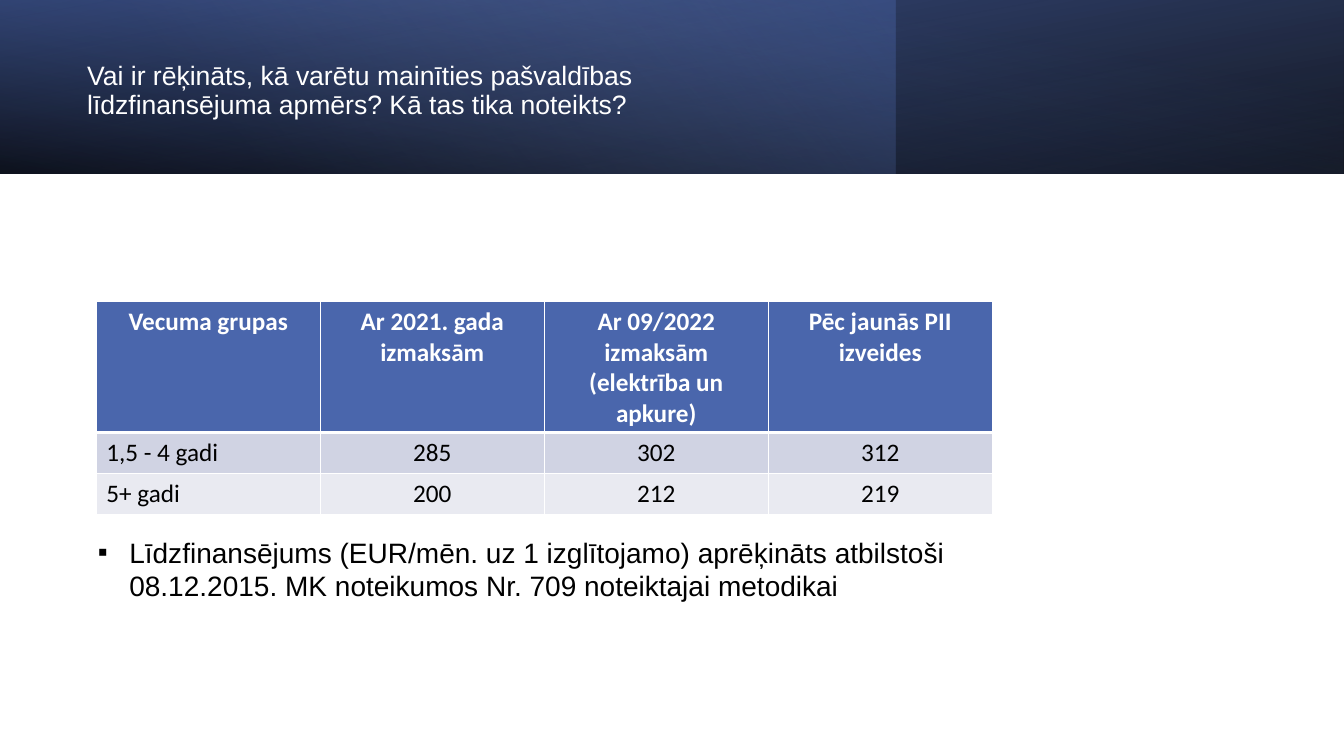
import pptx
import pptx.util
import pptx.dml.color
import pptx.enum.shapes
import pptx.enum.text
import pptx.oxml
import pptx.oxml.ns

Pt = pptx.util.Pt
RGBColor = pptx.dml.color.RGBColor
PP_ALIGN = pptx.enum.text.PP_ALIGN
ANCHOR = pptx.enum.text.MSO_ANCHOR
WHITE = RGBColor(0xFF, 0xFF, 0xFF)
BLACK = RGBColor(0x00, 0x00, 0x00)
BLUE = RGBColor(0x4A, 0x66, 0xAC)
NAVY = RGBColor(0x38, 0x4C, 0x81)
PALE_BLUE = RGBColor(0x90, 0xA2, 0xCF)
ROW_DARK = RGBColor(0xD0, 0xD3, 0xE3)
ROW_LIGHT = RGBColor(0xE9, 0xEA, 0xF1)
NS = pptx.oxml.ns.nsdecls("a")


def write(tf, text, size, color, font="Arial", bold=False, align=PP_ALIGN.LEFT, spacing=1.0):
    tf.word_wrap = True
    p = tf.paragraphs[0]
    p.text = text
    p.alignment = align
    p.line_spacing = spacing
    for r in p.runs:
        r.font.size = Pt(size)
        r.font.name = font
        r.font.bold = bold
        r.font.color.rgb = color
    return p


prs = pptx.Presentation()
prs.slide_width, prs.slide_height = Pt(960), Pt(540)
s = prs.slides.add_slide(prs.slide_layouts[6])

header_bands = [
    (960, 180, True, 100, [(0, BLACK, 96), (100, NAVY, 100)]),
    (640, 0, False, 140, [(0, BLUE, 41), (74, PALE_BLUE, 0)]),
    (960, 0, True, 260, [(0, BLACK, 63), (78, BLUE, 15)]),
]
for width, rotation, flipped, angle, stops in header_bands:
    sp = s.shapes.add_shape(pptx.enum.shapes.MSO_SHAPE.RECTANGLE, 0, 0, Pt(width), Pt(124))
    sp.shadow.inherit = False
    sp.line.fill.background()
    sp.rotation = rotation
    if flipped:
        sp.element.spPr.xfrm.set("flipH", "1")
    stop_xml = "".join(
        f'<a:gs pos="{pos * 1000}"><a:srgbClr val="{color}">'
        f'<a:alpha val="{opacity * 1000}"/></a:srgbClr></a:gs>'
        for pos, color, opacity in stops
    )
    gradient = pptx.oxml.parse_xml(
        f'<a:gradFill {NS} rotWithShape="1"><a:gsLst>{stop_xml}</a:gsLst>'
        f'<a:lin ang="{angle * 60000}" scaled="0"/></a:gradFill>'
    )
    sp.element.spPr.find(pptx.oxml.ns.qn("a:prstGeom")).addnext(gradient)

title = s.shapes.add_textbox(Pt(55.2), Pt(19.4), Pt(556), Pt(91.4))
title.text_frame.vertical_anchor = ANCHOR.MIDDLE
write(
    title.text_frame,
    "Vai ir rēķināts, kā varētu mainīties pašvaldības\n"
    "līdzfinansējuma apmērs? Kā tas tika noteikts?",
    size=19, color=WHITE, spacing=0.9,
)

note = s.shapes.add_textbox(Pt(62.8), Pt(378.7), Pt(713), Pt(55.7))
note.text_frame.auto_size = pptx.enum.text.MSO_AUTO_SIZE.SHAPE_TO_FIT_TEXT
p = write(
    note.text_frame,
    "Līdzfinansējums (EUR/mēn. uz 1 izglītojamo) aprēķināts atbilstoši "
    "08.12.2015. MK noteikumos Nr. 709 noteiktajai metodikai",
    size=20, color=BLACK,
)
pPr = p._p.get_or_add_pPr()
pPr.set("marL", str(Pt(22.5)))
pPr.set("indent", str(-Pt(22.5)))
pPr.append(pptx.oxml.parse_xml(f'<a:buFont {NS} typeface="Arial"/>'))
pPr.append(pptx.oxml.parse_xml(f'<a:buChar {NS} char="▪"/>'))

rows = [
    ("Vecuma grupas", "Ar 2021. gada izmaksām",
     "Ar 09/2022 izmaksām (elektrība un apkure)", "Pēc jaunās PII izveides"),
    ("1,5 - 4 gadi", "285", "302", "312"),
    ("5+ gadi", "200", "212", "219"),
]
row_fills = [BLUE, ROW_DARK, ROW_LIGHT]
row_heights = [93, 29.2, 29.2]
table = s.shapes.add_table(3, 4, Pt(68.8), Pt(215.3), Pt(640), Pt(sum(row_heights))).table
table.horz_banding = False
for column in table.columns:
    column.width = Pt(160)
for i, texts in enumerate(rows):
    table.rows[i].height = Pt(row_heights[i])
    is_header = i == 0
    for j, text in enumerate(texts):
        cell = table.cell(i, j)
        write(
            cell.text_frame, text, size=18, font="Calibri", bold=is_header,
            color=WHITE if is_header else BLACK,
            align=PP_ALIGN.CENTER if is_header or j > 0 else PP_ALIGN.LEFT,
        )
        tcPr = cell._tc.get_or_add_tcPr()
        for side in "LRTB":
            thick = (i, side) in [(0, "B"), (1, "T")]
            tcPr.append(pptx.oxml.parse_xml(
                f'<a:ln{side} {NS} w="{Pt(3 if thick else 1)}"><a:solidFill>'
                f'<a:srgbClr val="{WHITE}"/></a:solidFill></a:ln{side}>'
            ))
        cell.fill.solid()
        cell.fill.fore_color.rgb = row_fills[i]

prs.save("out.pptx")
